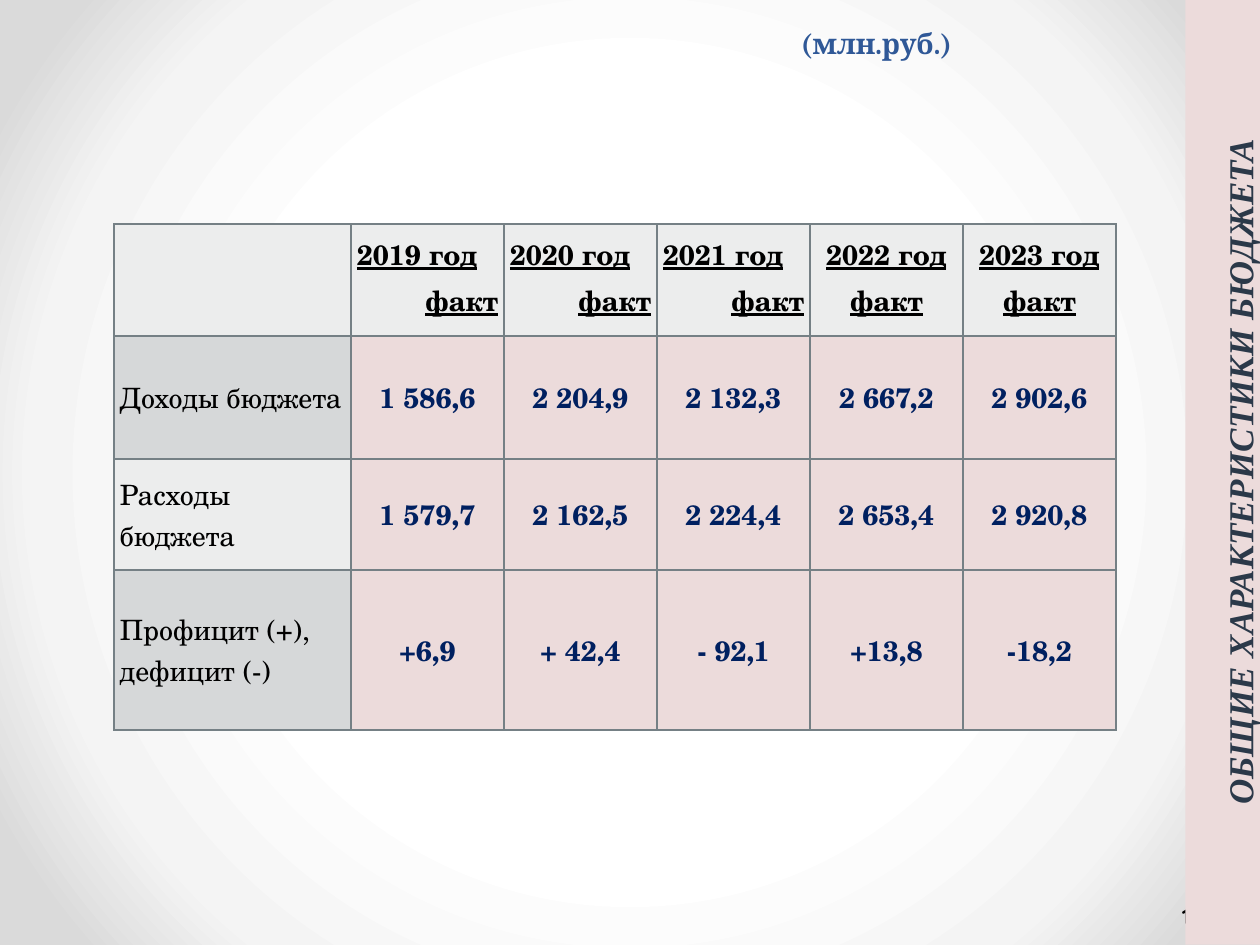
from dataclasses import dataclass

from lxml.etree import SubElement
from pptx import Presentation
from pptx.dml.color import RGBColor
from pptx.enum.shapes import MSO_SHAPE
from pptx.enum.text import MSO_ANCHOR, PP_ALIGN
from pptx.oxml import parse_xml
from pptx.oxml.ns import nsdecls, qn
from pptx.util import Pt


@dataclass(frozen=True)
class Theme:
    blue: str = "2F5897"
    navy: str = "002060"
    slate: str = "2B3949"
    black: str = "000000"
    rose: str = "ECDBDB"
    light: str = "ECEDED"
    grey: str = "D6D8D9"
    border: str = "758085"
    unit_font: str = "Cambria"
    table_font: str = "TeX Gyre Schola"
    number_font: str = "Quicksand"
    banner_font: str = "Times New Roman"
    unit_size: float = 16.2
    table_size: float = 16
    number_size: float = 12
    banner_size: float = 20


T = Theme()
BACKDROP = ((50, "FFFFFF"), (76, "F4F4F4"), (92, "DADADA"))
YEARS = (2019, 2020, 2021, 2022, 2023)
FIRST_CENTRED_YEAR = 2022
BUDGET = (
    ("Доходы бюджета", ("1 586,6", "2 204,9", "2 132,3", "2 667,2", "2 902,6")),
    ("Расходы бюджета", ("1 579,7", "2 162,5", "2 224,4", "2 653,4", "2 920,8")),
    ("Профицит (+), дефицит (-)", ("+6,9", "+ 42,4", "- 92,1", "+13,8", "-18,2")),
)
COLUMNS = (237, 153, 153, 153, 153, 153)
ROWS = (112, 123, 111, 160)


def px(n):
    return round(n * 914400 / 126)


def write(p, text, font, size, color, bold=True, italic=False,
          underline=False, align=PP_ALIGN.LEFT, spacing=None):
    p.alignment = align
    p.line_spacing = spacing
    r = p.add_run()
    r.text = text
    f = r.font
    f.name, f.size = font, Pt(size)
    f.bold, f.italic, f.underline = bold, italic, underline
    f.color.rgb = RGBColor.from_string(color)


def set_margins(obj, left, top, right, bottom):
    obj.margin_left, obj.margin_top = px(left), px(top)
    obj.margin_right, obj.margin_bottom = px(right), px(bottom)


def set_background(s):
    stops = "".join(
        f'<a:gs pos="{pos * 1000}"><a:srgbClr val="{color}"/></a:gs>'
        for pos, color in BACKDROP)
    bg = parse_xml(
        f'<p:bg {nsdecls("p", "a")}><p:bgPr><a:gradFill rotWithShape="1">'
        f'<a:gsLst>{stops}</a:gsLst><a:path path="circle">'
        '<a:fillToRect l="50000" t="50000" r="50000" b="50000"/></a:path>'
        '</a:gradFill><a:effectLst/></p:bgPr></p:bg>')
    s.shapes._spTree.addprevious(bg)


def add_label(s, box, text, anchor, **style):
    sp = s.shapes.add_textbox(*map(px, box))
    tf = sp.text_frame
    tf.word_wrap = True
    tf.vertical_anchor = anchor
    set_margins(tf, 4, 0, 0, 0)
    write(tf.paragraphs[0], text, **style)


def style_cell(cell, fill, anchor=MSO_ANCHOR.MIDDLE):
    set_margins(cell, 6, 6, 6, 6)
    cell.vertical_anchor = anchor
    tcPr = cell._tc.get_or_add_tcPr()
    for side in ("lnL", "lnR", "lnT", "lnB"):
        ln = SubElement(tcPr, qn(f"a:{side}"), w=str(Pt(1)))
        SubElement(SubElement(ln, qn("a:solidFill")), qn("a:srgbClr"), val=T.border)
    cell.fill.solid()
    cell.fill.fore_color.rgb = RGBColor.from_string(fill)


def fill_header(cell, year):
    style_cell(cell, T.light, MSO_ANCHOR.TOP)
    aligns = (PP_ALIGN.LEFT, PP_ALIGN.RIGHT)
    if year >= FIRST_CENTRED_YEAR:
        aligns = (PP_ALIGN.CENTER, PP_ALIGN.CENTER)
    tf = cell.text_frame
    for p, text, align in zip((tf.paragraphs[0], tf.add_paragraph()),
                              (f"{year} год", "факт"), aligns):
        write(p, text, T.table_font, T.table_size, T.black,
              underline=True, align=align, spacing=1.07)


def add_budget_table(s):
    frame = s.shapes.add_table(len(ROWS), len(COLUMNS), px(114), px(224),
                               px(sum(COLUMNS)), px(sum(ROWS)))
    table = frame.table
    table.first_row = table.horz_banding = False
    for column, width in zip(table.columns, COLUMNS):
        column.width = px(width)
    for row, height in zip(table.rows, ROWS):
        row.height = px(height)
    style_cell(table.cell(0, 0), T.light)
    for c, year in enumerate(YEARS, 1):
        fill_header(table.cell(0, c), year)
    for r, (label, values) in enumerate(BUDGET, 1):
        cell = table.cell(r, 0)
        style_cell(cell, T.grey if r % 2 else T.light)
        write(cell.text_frame.paragraphs[0], label, T.table_font,
              T.table_size, T.black, bold=False)
        for c, value in enumerate(values, 1):
            cell = table.cell(r, c)
            style_cell(cell, T.rose)
            write(cell.text_frame.paragraphs[0], value, T.table_font,
                  T.table_size, T.navy, align=PP_ALIGN.CENTER)


def add_banner(s, center, width, height, text):
    x, y = center
    sp = s.shapes.add_shape(MSO_SHAPE.RECTANGLE, px(x - width / 2),
                            px(y - height / 2), px(width), px(height))
    sp.rotation = 270
    sp.shadow.inherit = False
    sp.fill.solid()
    sp.fill.fore_color.rgb = RGBColor.from_string(T.rose)
    sp.line.fill.background()
    tf = sp.text_frame
    tf.word_wrap = True
    tf.vertical_anchor = MSO_ANCHOR.BOTTOM
    set_margins(tf, 6, 0, 6, 0)
    write(tf.paragraphs[0], text, T.banner_font, T.banner_size, T.slate,
          italic=True, align=PP_ALIGN.CENTER)


def main():
    prs = Presentation()
    prs.slide_width, prs.slide_height = px(1260), px(945)
    s = prs.slides.add_slide(prs.slide_layouts[6])
    set_background(s)
    add_label(s, (650, 22, 302, 42), "(млн.руб.)", MSO_ANCHOR.MIDDLE,
              font=T.unit_font, size=T.unit_size, color=T.blue,
              align=PP_ALIGN.RIGHT)
    add_budget_table(s)
    add_label(s, (1178, 900, 80, 32), "16", MSO_ANCHOR.MIDDLE,
              font=T.number_font, size=T.number_size, color=T.black)
    add_banner(s, (1223, 472), 945, 75, "ОБЩИЕ ХАРАКТЕРИСТИКИ БЮДЖЕТА")
    prs.save("out.pptx")


if __name__ == "__main__":
    main()
